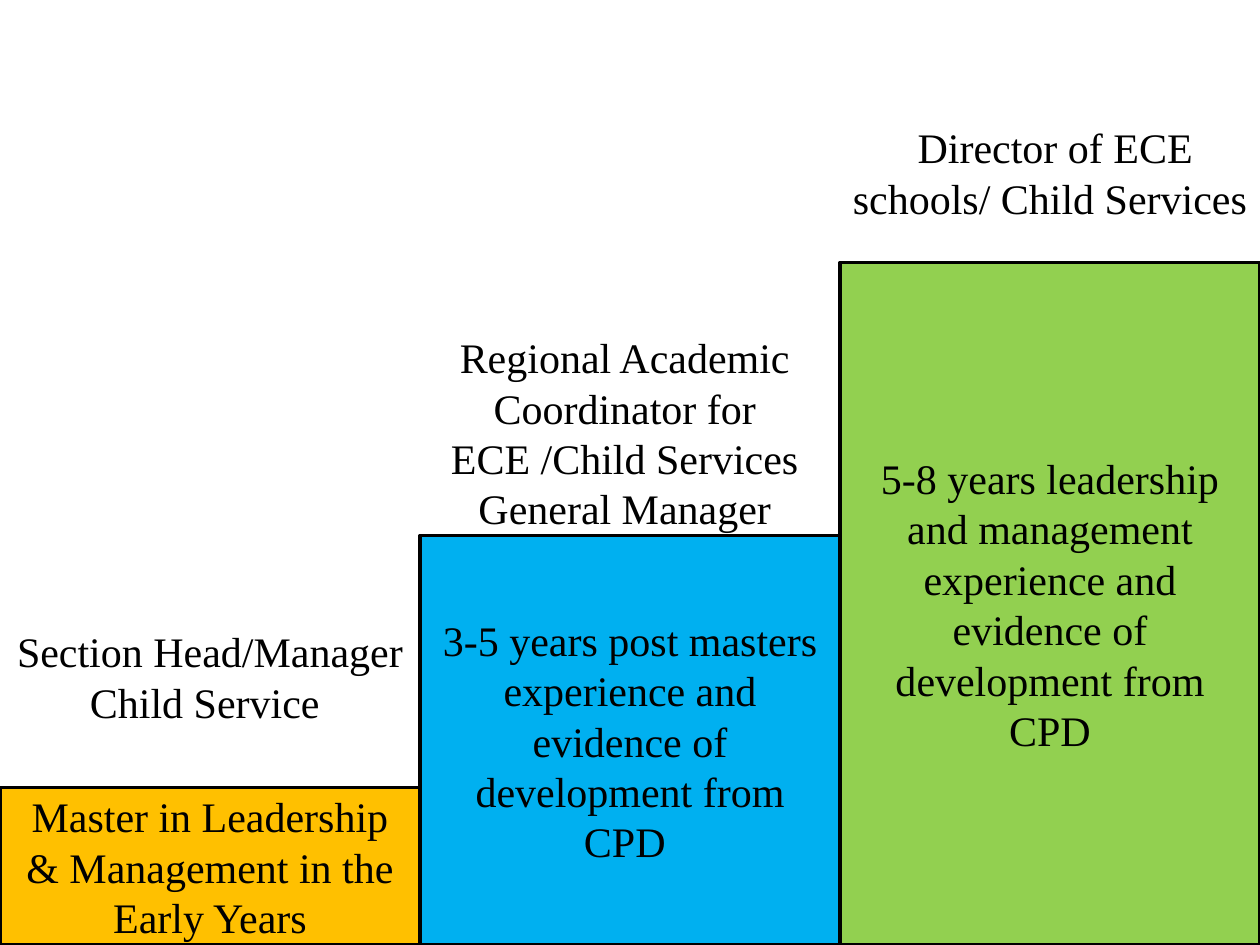
from pptx import Presentation
from pptx.dml.color import RGBColor
from pptx.enum import shapes, text
from pptx.util import Pt

SLIDE_WIDTH, SLIDE_HEIGHT = 720, 540
STEP_WIDTH = SLIDE_WIDTH / 3


def color(hex_string):
    return RGBColor.from_string(hex_string)


def write_centered(shape, words, anchor):
    frame = shape.text_frame
    frame.word_wrap = True
    frame.vertical_anchor = anchor
    paragraph = frame.paragraphs[0]
    paragraph.text = words
    paragraph.alignment = text.PP_ALIGN.CENTER
    paragraph.font.name = "Times New Roman"
    paragraph.font.size = Pt(24)
    paragraph.font.color.rgb = color("000000")


presentation = Presentation()
presentation.slide_width = Pt(SLIDE_WIDTH)
presentation.slide_height = Pt(SLIDE_HEIGHT)
slide = presentation.slides.add_slide(presentation.slide_layouts[6])

# Step top, fill and requirement, from left to right
steps = [
    (450, "FFC000", "Master in Leadership & Management in the Early Years"),
    (306, "00B0F0", "3-5 years post masters experience and evidence of "
                    "development from CPD "),
    (150, "92D050", "5-8 years leadership and management experience and "
                    "evidence of development from CPD"),
]
for column, (top, fill, requirement) in enumerate(steps):
    step = slide.shapes.add_shape(
        shapes.MSO_SHAPE.RECTANGLE, Pt(column * STEP_WIDTH), Pt(top),
        Pt(STEP_WIDTH), Pt(SLIDE_HEIGHT - top))
    step.shadow.inherit = False
    step.fill.solid()
    step.fill.fore_color.rgb = color(fill)
    step.line.color.rgb = color("000000")
    step.line.width = Pt(2)
    write_centered(step, requirement, text.MSO_ANCHOR.MIDDLE)

# Label top, width, height and position reached, from left to right
labels = [
    (354, 240, 65.5, "Section Head/Manager Child Service "),
    (186, 234, 124, "Regional Academic Coordinator for ECE /Child Services "
                    "General Manager"),
    (66, 240, 90, " Director of ECE schools/ Child Services"),
]
for column, (top, width, height, position) in enumerate(labels):
    label = slide.shapes.add_textbox(
        Pt(column * STEP_WIDTH), Pt(top), Pt(width), Pt(height))
    write_centered(label, position, text.MSO_ANCHOR.TOP)

presentation.save("out.pptx")
